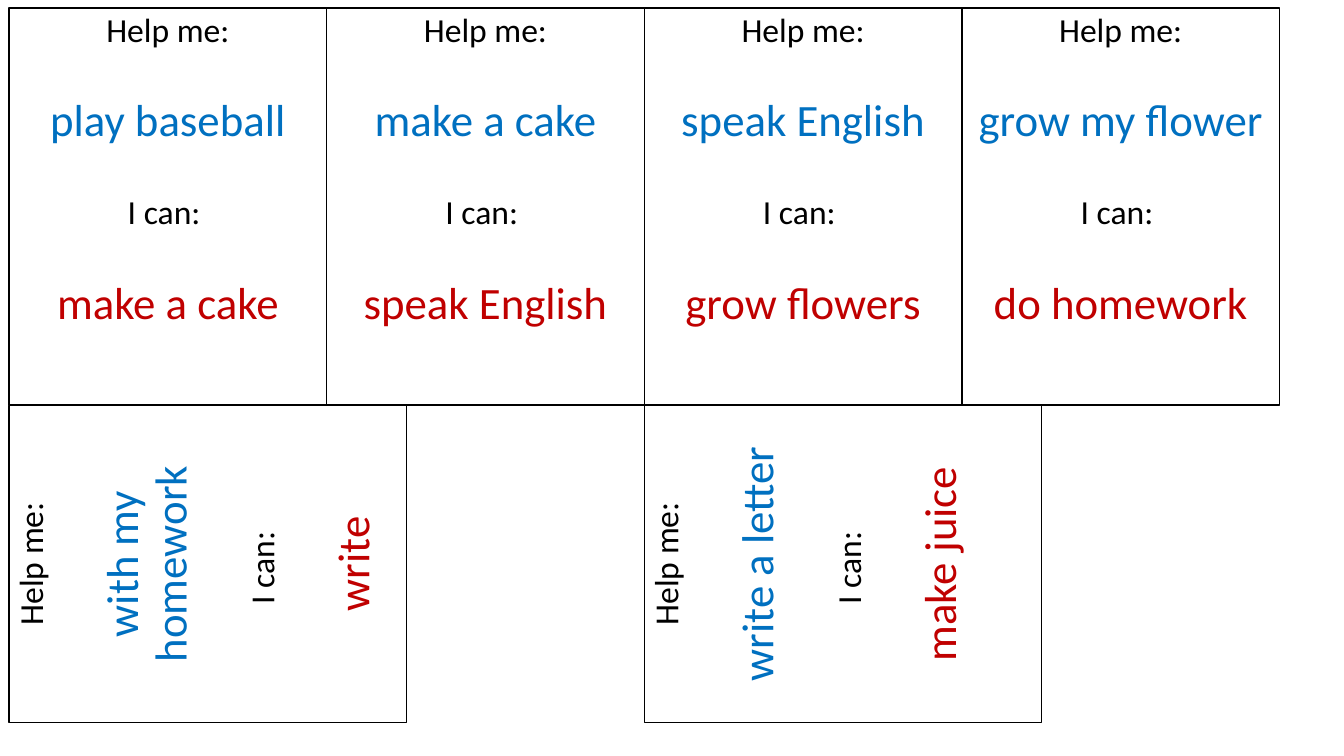
"""Builds a slide of six cue cards for asking for and offering help."""
from pptx import Presentation
from pptx.dml.color import RGBColor
from pptx.enum.shapes import MSO_SHAPE as SHAPE
from pptx.enum.text import MSO_ANCHOR as ANCHOR, PP_ALIGN as ALIGN
from pptx.util import Inches, Pt

CARD_W, CARD_H = 3.15, 3.94
LEFT, TOP = 0.09, 0.08
UPRIGHT = [
    ("play baseball", "make a cake"),
    ("make a cake", "speak English"),
    ("speak English", "grow flowers"),
    ("grow my flower", "do homework"),
]
TURNED = [
    ("with my homework", "write"),
    ("write a letter", "make juice"),
]


def rgb(value):
    return RGBColor.from_string(value)


def write(p, text, size=24, color="000000", font="Calibri", after=35):
    p.alignment = ALIGN.CENTER
    p.line_spacing = 0.9
    p.space_after = Pt(after)
    r = p.add_run()
    r.text = text
    r.font.name = font
    r.font.size = Pt(size)
    r.font.color.rgb = rgb(color)


class CardSlide:
    BLACK, WHITE, BLUE, RED = "000000", "FFFFFF", "0070C0", "C00000"

    def __init__(self, prs):
        self.s = prs.slides.add_slide(prs.slide_layouts[6])

    def card(self, x, y, need, skill, rotation=0):
        sp = self.s.shapes.add_shape(SHAPE.RECTANGLE, Inches(x), Inches(y),
                                     Inches(CARD_W), Inches(CARD_H))
        sp.rotation = rotation
        sp.shadow.inherit = False
        sp.fill.solid()
        sp.fill.fore_color.rgb = rgb(self.WHITE)
        sp.line.color.rgb = rgb(self.BLACK)
        sp.line.width = Pt(1)
        tf = sp.text_frame
        tf.word_wrap = True
        tf.vertical_anchor = ANCHOR.TOP
        write(tf.paragraphs[0], "Help me:")
        write(tf.add_paragraph(), need, size=32, color=self.BLUE)
        write(tf.add_paragraph(), "I can: ")
        write(tf.add_paragraph(), skill, size=32, color=self.RED, after=0)

    def turned_card(self, x, y, need, skill):
        shift = (CARD_H - CARD_W) / 2
        self.card(x + shift, y - shift, need, skill, rotation=270)


def main():
    prs = Presentation()
    prs.slide_width, prs.slide_height = Inches(13.33), Inches(7.5)
    slide = CardSlide(prs)
    for i, (need, skill) in enumerate(UPRIGHT):
        slide.card(LEFT + i * CARD_W, TOP, need, skill)
    for i, (need, skill) in enumerate(TURNED):
        slide.turned_card(LEFT + 2 * i * CARD_W, TOP + CARD_H, need, skill)
    prs.save("out.pptx")


if __name__ == "__main__":
    main()
